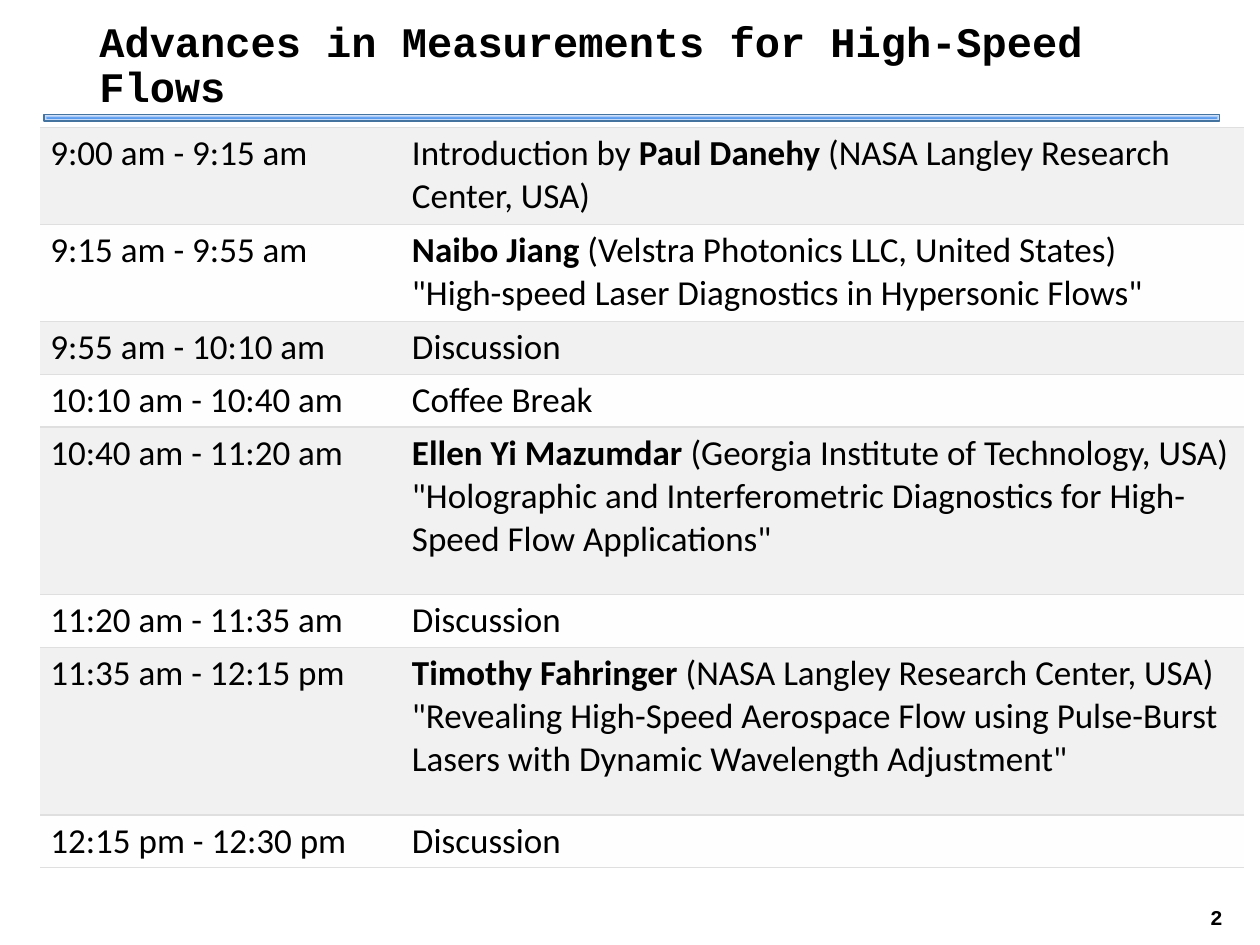
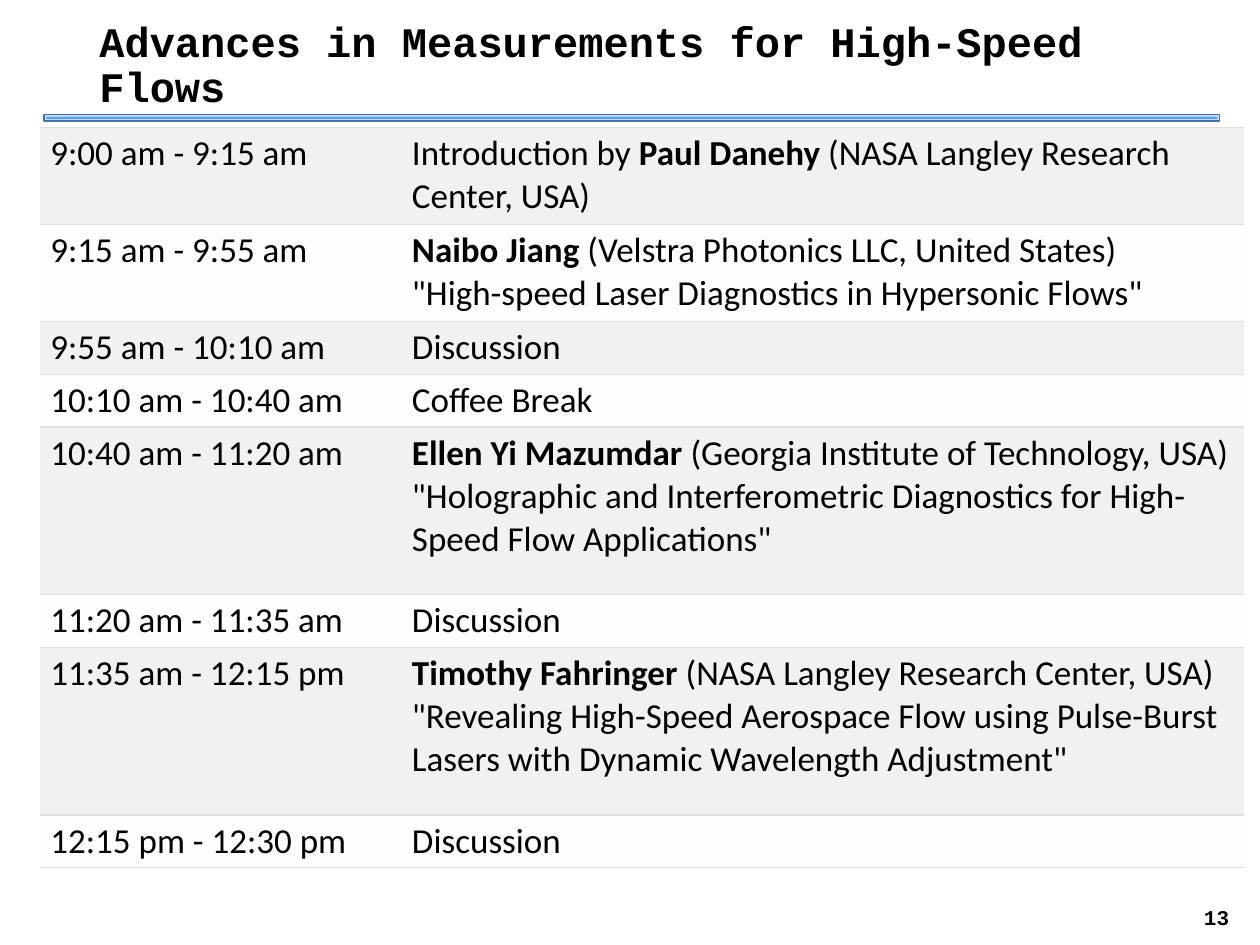
from dataclasses import dataclass
from typing import Any

from pptx import Presentation
from pptx.dml.color import RGBColor
from pptx.enum.shapes import MSO_SHAPE as Preset
from pptx.enum.text import MSO_ANCHOR as Anchor, PP_ALIGN as Align
from pptx.oxml import parse_xml
from pptx.oxml.ns import nsdecls
from pptx.util import Inches, Pt

# Slide size and shared look
WIDTH, HEIGHT = Inches(10), Inches(7.5)
BLACK = RGBColor(0x00, 0x00, 0x00)
BAND_LINE = RGBColor(0x43, 0x73, 0x9E)
BAND_STOPS = (
    (0, RGBColor(0x59, 0x9B, 0xEF)),
    (50, RGBColor(0xC2, 0xD8, 0xF8)),
    (100, RGBColor(0xE1, 0xEB, 0xFB)),
)
ROW_FILLS = (RGBColor(0xF1, 0xF1, 0xF1), RGBColor(0xFE, 0xFE, 0xFE))
ROW_LINE = RGBColor(0xDF, 0xDF, 0xDF)

TITLE_FONT = {"name": "Courier New", "size": Pt(24), "bold": True}
NUMBER_FONT = {"name": "Courier New", "size": Pt(12), "bold": True}
AGENDA_FONT = {"name": "Calibri", "size": Pt(20), "bold": False}
CELL_MARGINS = {
    "margin_left": Inches(0.08),
    "margin_right": Inches(0.08),
    "margin_top": Inches(0.04),
    "margin_bottom": Inches(0.04),
}

# Row heights of the agenda
SHORT, MEDIUM, TALL = Inches(0.42), Inches(0.77), Inches(1.33)
TIME_COLUMN, SESSION_COLUMN = Inches(2.87), Inches(6.68)


@dataclass(frozen=True)
class Area:
    """Left and top, width and height, as percentages of the slide."""

    left: float
    top: float
    width: float
    height: float

    def lengths(self) -> tuple[int, int, int, int]:
        return (
            int(WIDTH * self.left / 100),
            int(HEIGHT * self.top / 100),
            int(WIDTH * self.width / 100),
            int(HEIGHT * self.height / 100),
        )


@dataclass(frozen=True)
class Session:
    time: str
    before: str = ""
    speaker: str = ""
    affiliation: str = ""
    talk: str = ""
    height: int = SHORT


BAND = Area(3.5, 12.13, 93.3, 0.67)
TITLE = Area(6.9, 0.53, 86.2, 12.93)
AGENDA = Area(3.2, 13.47, 95.5, 78.5)
NUMBER = Area(90.8, 94.4, 11.5, 5.33)

# Content
TITLE_TEXT = "Advances in Measurements for High-Speed Flows"
PAGE_NUMBERS = (2, 13)
SESSIONS = (
    Session("9:00 am - 9:15 am", "Introduction by ", "Paul Danehy",
            " (NASA Langley Research Center, USA)", height=MEDIUM),
    Session("9:15 am - 9:55 am", speaker="Naibo Jiang",
            affiliation=" (Velstra Photonics LLC, United States)",
            talk='"High-speed Laser Diagnostics in Hypersonic Flows"',
            height=MEDIUM),
    Session("9:55 am - 10:10 am", "Discussion"),
    Session("10:10 am - 10:40 am", "Coffee Break"),
    Session("10:40 am - 11:20 am", speaker="Ellen Yi Mazumdar",
            affiliation=" (Georgia Institute of Technology, USA)",
            talk='"Holographic and Interferometric Diagnostics for High- '
                 'Speed Flow Applications"',
            height=TALL),
    Session("11:20 am - 11:35 am", "Discussion"),
    Session("11:35 am - 12:15 pm", speaker="Timothy Fahringer",
            affiliation=" (NASA Langley Research Center, USA)",
            talk='"Revealing High-Speed Aerospace Flow using Pulse-Burst '
                 'Lasers with Dynamic Wavelength Adjustment"',
            height=TALL),
    Session("12:15 pm - 12:30 pm", "Discussion"),
)


def set_all(target: Any, values: dict[str, Any]) -> None:
    for name, value in values.items():
        setattr(target, name, value)


def add_run(paragraph: Any, text: str, font: dict[str, Any]) -> None:
    run = paragraph.add_run()
    run.text = text
    set_all(run.font, font)
    run.font.color.rgb = BLACK


def add_text(slide: Any, area: Area, text: str, font: dict[str, Any],
             layout: dict[str, Any]) -> None:
    frame = slide.shapes.add_textbox(*area.lengths()).text_frame
    set_all(frame, {"word_wrap": True, "vertical_anchor": Anchor.MIDDLE})
    paragraph = frame.paragraphs[0]
    set_all(paragraph, layout)
    add_run(paragraph, text, font)


def add_band(slide: Any) -> None:
    band = slide.shapes.add_shape(Preset.RECTANGLE, *BAND.lengths())
    band.shadow.inherit = False
    band.line.color.rgb = BAND_LINE
    band.line.width = 0
    # A gradient running from the centre to the edges
    stops = "".join(
        f'<a:gs pos="{share * 1000}"><a:srgbClr val="{color}"/></a:gs>'
        for share, color in BAND_STOPS
    )
    gradient = parse_xml(
        f'<a:gradFill {nsdecls("a")}><a:gsLst>{stops}</a:gsLst>'
        '<a:path path="shape"><a:fillToRect l="50000" t="50000" '
        'r="50000" b="50000"/></a:path></a:gradFill>'
    )
    band.element.spPr.find("{*}prstGeom").addnext(gradient)


def style_cell(cell: Any, fill: RGBColor) -> None:
    properties = cell._tc.get_or_add_tcPr()
    line = f'<a:solidFill><a:srgbClr val="{ROW_LINE}"/></a:solidFill>'
    edges = {"L": "<a:noFill/>", "R": "<a:noFill/>", "T": line, "B": line}
    for side, paint in edges.items():
        properties.append(parse_xml(
            f'<a:ln{side} {nsdecls("a")} w="{Pt(0.75)}">{paint}</a:ln{side}>'
        ))
    cell.fill.solid()
    cell.fill.fore_color.rgb = fill
    set_all(cell, CELL_MARGINS)


def add_agenda(slide: Any) -> None:
    table = slide.shapes.add_table(len(SESSIONS), 2, *AGENDA.lengths()).table
    set_all(table, {"first_row": False, "horz_banding": False})
    for column, width in zip(table.columns, (TIME_COLUMN, SESSION_COLUMN)):
        column.width = width
    for index, session in enumerate(SESSIONS):
        table.rows[index].height = session.height
        time_cell, session_cell = table.rows[index].cells
        for cell in (time_cell, session_cell):
            style_cell(cell, ROW_FILLS[index % 2])
        add_run(time_cell.text_frame.paragraphs[0], session.time, AGENDA_FONT)
        frame = session_cell.text_frame
        parts = (
            (session.before, False),
            (session.speaker, True),
            (session.affiliation, False),
        )
        for text, bold in parts:
            if text:
                add_run(frame.paragraphs[0], text, AGENDA_FONT | {"bold": bold})
        if session.talk:
            add_run(frame.add_paragraph(), session.talk, AGENDA_FONT)


def add_agenda_slide(presentation: Any, number: int) -> None:
    slide = presentation.slides.add_slide(presentation.slide_layouts[6])
    add_band(slide)
    add_text(slide, TITLE, TITLE_TEXT, TITLE_FONT, {"line_spacing": 0.9})
    add_agenda(slide)
    add_text(slide, NUMBER, str(number), NUMBER_FONT,
             {"alignment": Align.CENTER})


def main() -> None:
    presentation = Presentation()
    set_all(presentation, {"slide_width": WIDTH, "slide_height": HEIGHT})
    for number in PAGE_NUMBERS:
        add_agenda_slide(presentation, number)
    presentation.save("out.pptx")


if __name__ == "__main__":
    main()
